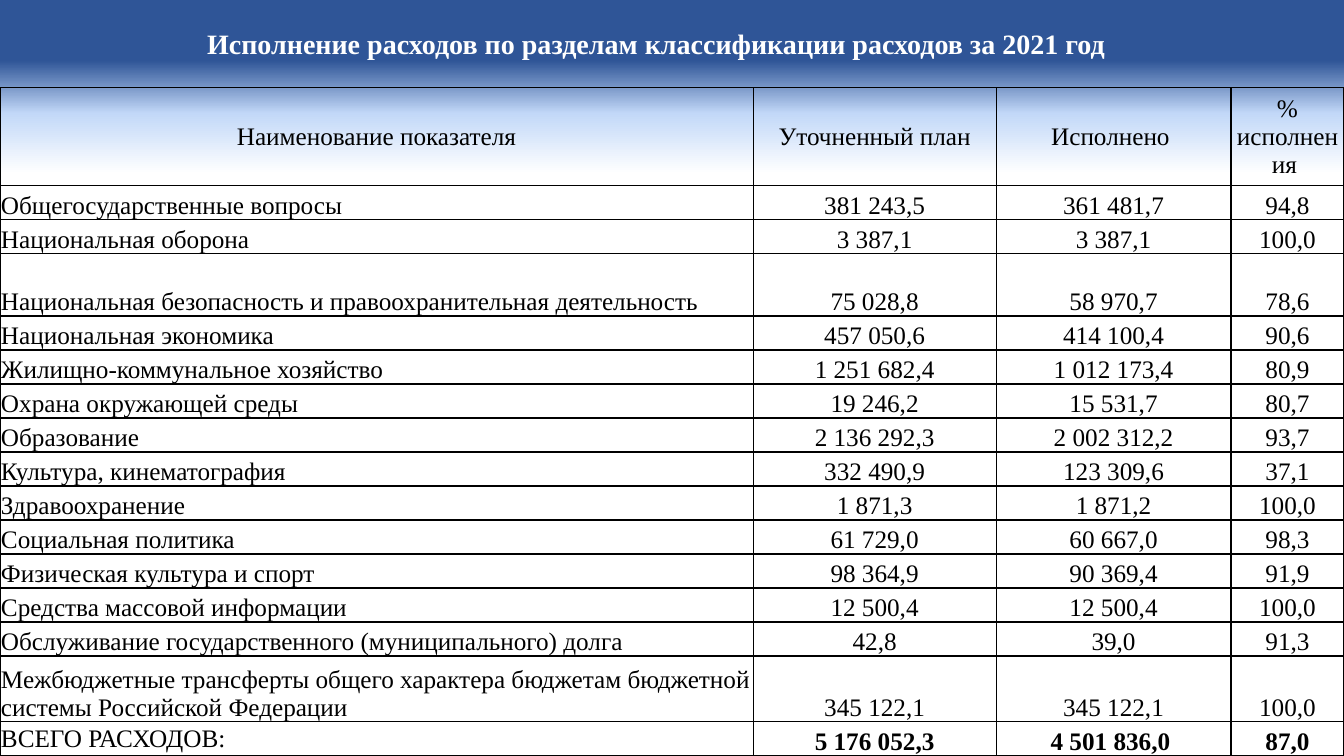
"""Builds the slide on budget spending by section for 2021."""
from copy import deepcopy

from lxml import etree
from pptx import Presentation
from pptx import util as u
from pptx.dml.color import RGBColor
from pptx.enum import text
from pptx.oxml import ns

NAVY = RGBColor(0x2F, 0x55, 0x97)
SKY = RGBColor(0xC2, 0xD8, 0xF8)
WHITE = RGBColor(0xFF, 0xFF, 0xFF)
BLACK = RGBColor(0, 0, 0)

TITLE = "Исполнение расходов по разделам классификации расходов за 2021 год"
ROWS = [
    ("Наименование показателя", "Уточненный план", "Исполнено ", "% исполнения "),
    ("Общегосударственные вопросы", "381 243,5", "361 481,7", "94,8"),
    ("Национальная оборона", "3 387,1", "3 387,1", "100,0"),
    ("Национальная безопасность и правоохранительная деятельность",
     "75 028,8", "58 970,7", "78,6"),
    ("Национальная экономика", "457 050,6", "414 100,4", "90,6"),
    ("Жилищно-коммунальное хозяйство", "1 251 682,4", "1 012 173,4", "80,9"),
    ("Охрана окружающей среды", "19 246,2", "15 531,7", "80,7"),
    ("Образование", "2 136 292,3", "2 002 312,2", "93,7"),
    ("Культура, кинематография", "332 490,9", "123 309,6", "37,1"),
    ("Здравоохранение", "1 871,3", "1 871,2", "100,0"),
    ("Социальная политика", "61 729,0", "60 667,0", "98,3"),
    ("Физическая культура и спорт", "98 364,9", "90 369,4", "91,9"),
    ("Средства массовой информации", "12 500,4", "12 500,4", "100,0"),
    ("Обслуживание государственного (муниципального) долга",
     "42,8", "39,0", "91,3"),
    ("Межбюджетные трансферты общего характера бюджетам бюджетной системы "
     "Российской Федерации", "345 122,1", "345 122,1", "100,0"),
    ("ВСЕГО РАСХОДОВ:", "5 176 052,3", "4 501 836,0 ", "87,0"),
]
LAST = len(ROWS) - 1
COLUMN_WIDTHS = [7.47, 2.41, 2.33, 1.12]
TABLE_HEIGHT = 6.63
TALL_ROWS = {0: 0.97, 3: 0.62, 14: 0.65}
ROW_HEIGHT = (TABLE_HEIGHT - sum(TALL_ROWS.values())) / (len(ROWS) - len(TALL_ROWS))


class BudgetSlide:
    """Holds the style and the current page."""

    font = "Times New Roman"

    def __init__(self, page):
        """Keep the page to draw on."""
        self.page = page

    def background(self, stops, angle):
        """Fill the page with a linear gradient."""
        fill = self.page.background.fill
        fill.gradient()
        fill.gradient_angle = angle
        stop_list = self.page.element.find(".//" + ns.qn("a:gsLst"))
        while len(stop_list) < len(stops):
            stop_list.append(deepcopy(stop_list[-1]))
        for stop, (position, color) in zip(fill.gradient_stops, stops):
            stop.position = position
            stop.color.rgb = color

    def paragraph(self, frame, words, size, color, align, bold=False):
        """Put one styled paragraph into a text frame."""
        frame.text = words
        para = frame.paragraphs[0]
        para.alignment = align
        for span in para.runs:
            span.font.name = self.font
            span.font.size = u.Pt(size)
            span.font.bold = bold
            span.font.color.rgb = color
        return para

    def title(self, words, left, top, width, height):
        """Add the heading."""
        box = self.page.shapes.add_textbox(
            u.Inches(left), u.Inches(top), u.Inches(width), u.Inches(height))
        frame = box.text_frame
        frame.word_wrap = True
        frame.vertical_anchor = text.MSO_ANCHOR.MIDDLE
        frame.margin_bottom = u.Inches(0.09)
        para = self.paragraph(frame, words, 20, WHITE, text.PP_ALIGN.CENTER, True)
        para.line_spacing = 0.9

    def table(self, rows, left, top):
        """Add the spending table."""
        shape = self.page.shapes.add_table(
            len(rows), len(COLUMN_WIDTHS), u.Inches(left), u.Inches(top),
            u.Inches(sum(COLUMN_WIDTHS)), u.Inches(TABLE_HEIGHT))
        grid = shape.table
        grid.first_row = grid.horz_banding = False
        for column, width in zip(grid.columns, COLUMN_WIDTHS):
            column.width = u.Inches(width)
        for i, values in enumerate(rows):
            grid.rows[i].height = u.Inches(TALL_ROWS.get(i, ROW_HEIGHT))
            for j, value in enumerate(values):
                self.cell(grid.cell(i, j), value, i, j)
        self.borders(shape)
        for cell in grid.iter_cells():
            cell.fill.background()

    def cell(self, cell, value, i, j):
        """Fill and align one table cell."""
        cell.margin_left = cell.margin_right = cell.margin_top = u.Inches(0.01)
        cell.margin_bottom = 0
        middle = i == 0 or (i == LAST and j == 0)
        cell.vertical_anchor = (
            text.MSO_ANCHOR.MIDDLE if middle else text.MSO_ANCHOR.BOTTOM)
        align = text.PP_ALIGN.CENTER if i == 0 or j else text.PP_ALIGN.LEFT
        self.paragraph(cell.text_frame, value, 18, BLACK, align, i == LAST and j > 0)

    def borders(self, shape):
        """Draw thin black lines around every cell."""
        for properties in shape.element.iter(ns.qn("a:tcPr")):
            for side in ("lnL", "lnR", "lnT", "lnB"):
                line = etree.SubElement(
                    properties, ns.qn("a:" + side), w=str(u.Pt(1)))
                fill = etree.SubElement(line, ns.qn("a:solidFill"))
                etree.SubElement(fill, ns.qn("a:srgbClr"), val=str(BLACK))


def main():
    """Build and save the deck."""
    deck = Presentation()
    deck.slide_width = u.Inches(13.33)
    deck.slide_height = u.Inches(7.5)
    slide = BudgetSlide(deck.slides.add_slide(deck.slide_layouts[6]))
    slide.background([(0.08, NAVY), (0.15, SKY), (0.23, WHITE)], 270)
    slide.table(ROWS, 0, 0.87)
    slide.title(TITLE, 0.76, -0.08, 11.5, 1.1)
    deck.save("out.pptx")


if __name__ == "__main__":
    main()
